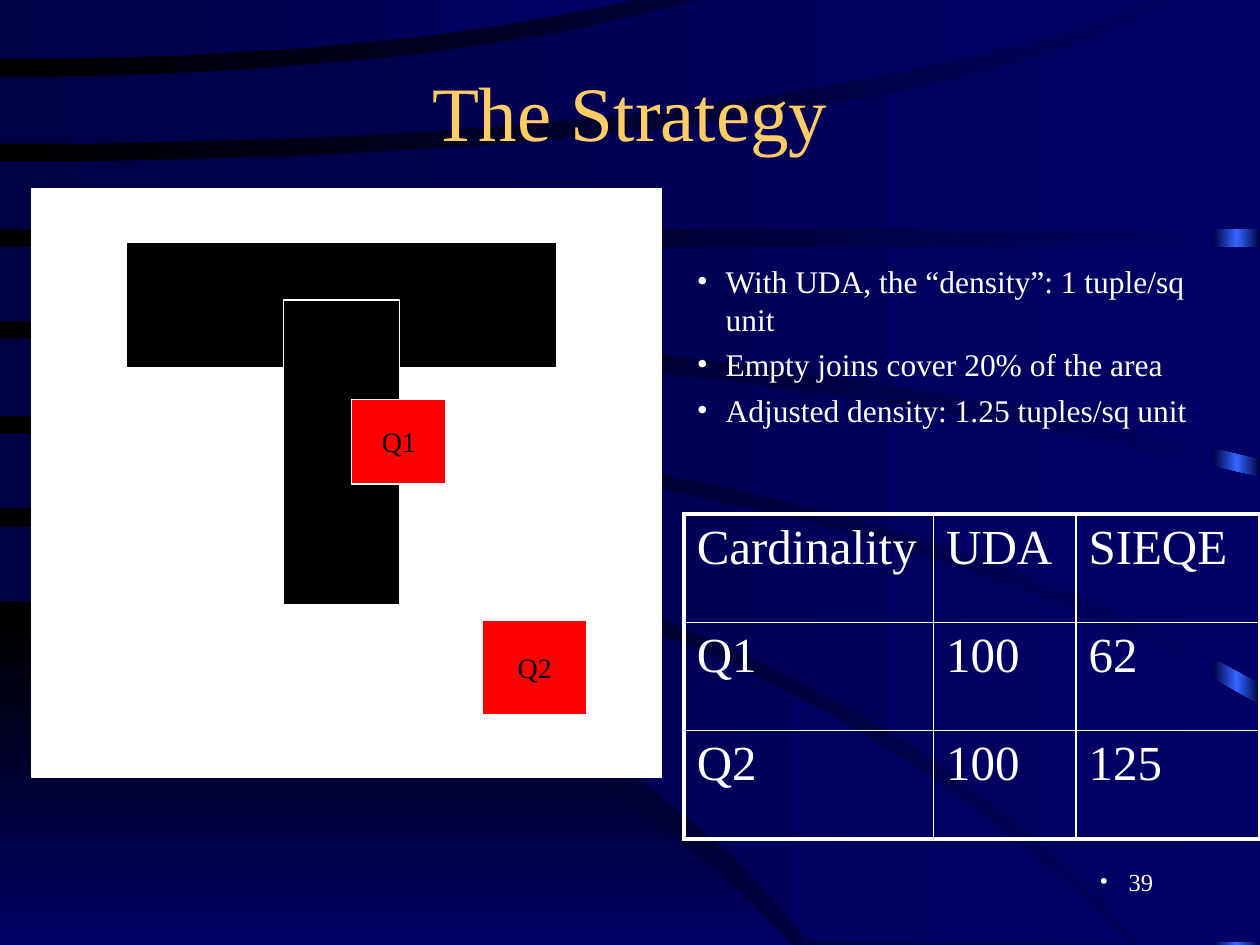
from copy import deepcopy

from lxml.etree import SubElement
from pptx import Presentation
from pptx.dml.color import RGBColor
from pptx.enum.shapes import MSO_SHAPE as Kind
from pptx.enum.text import MSO_ANCHOR as Anchor, MSO_AUTO_SIZE as Fit, PP_ALIGN as Align
from pptx.oxml.ns import qn
from pptx.util import Pt

PX = 9144  # 100 px to the inch
FONT = "Times New Roman"
BLACK = RGBColor(0x00, 0x00, 0x00)
WHITE = RGBColor(0xFF, 0xFF, 0xFF)
NAVY = RGBColor(0x00, 0x00, 0x66)
DARK = RGBColor(0x00, 0x00, 0x44)
BLUE = RGBColor(0x33, 0x66, 0xFF)
GOLD = RGBColor(0xFF, 0xCC, 0x66)
RED = RGBColor(0xFF, 0x00, 0x00)

# Upper and lower edge of each band: start y, bend x, end x, end y; then any corner
BANDS = [
    ((418, 579, 893, 748), (477, 430, 642, 748)),
    ((344, 640, 1000, 560), (403, 588, 909, 748), (1000, 748)),
    ((269, 546, 1000, 379), (330, 620, 1000, 542)),
    ((196, 500, 1000, 196), (255, 560, 1000, 364)),
    ((128, 676, 943, 0), (182, 500, 1000, 182), (1000, 0)),
    ((61, 338, 556, 0), (114, 621, 917, 0)),
    ((0, 250, 501, 0), (47, 290, 501, 0)),
]
CORNER = ((491, 390, 628, 750), (750, 314, 628, 750))


def place(shape, box):
    for name, size in zip(("left", "top", "width", "height"), box):
        setattr(shape, name, size * PX)


def blend(fill, first, last, angle=0):
    fill.gradient()
    fill.gradient_angle = angle
    for stop, tone in zip(fill.gradient_stops, (first, last)):
        stop.color.rgb = tone


def rect(slide, box, tone):
    shape = slide.shapes.add_shape(Kind.RECTANGLE, *[n * PX for n in box])
    shape.shadow.inherit = False
    shape.fill.solid()
    shape.fill.fore_color.rgb = tone
    shape.line.color.rgb = WHITE
    shape.line.width = Pt(1)
    return shape


def write(para, text, size, tone, align=Align.LEFT):
    para.alignment = align
    run = para.add_run()
    run.text = text
    for name, value in {"name": FONT, "size": Pt(size)}.items():
        setattr(run.font, name, value)
    run.font.color.rgb = tone


def bullet(para):
    props = para._p.get_or_add_pPr()
    props.set("marL", str(23 * PX))
    props.set("indent", str(-23 * PX))
    SubElement(props, qn("a:buFont")).set("typeface", FONT)
    SubElement(props, qn("a:buChar")).set("char", "•")


def curve(start, bend, end, drop, steps=16):
    """Points of a quadratic curve that leaves the left edge level."""
    times = [i / steps for i in range(steps + 1)]
    return [(round(2 * t * (1 - t) * bend + t * t * end),
             round(start + t * t * (drop - start))) for t in times]


def sweep(slide, band, first, last, angle=0):
    upper, lower, *corner = band
    dots = curve(*upper) + corner + curve(*lower)[::-1]
    pen = slide.shapes.build_freeform(*dots[0], scale=PX)
    pen.add_line_segments(dots[1:], close=True)
    shape = pen.convert_to_shape()
    shape.shadow.inherit = False
    shape.line.fill.background()
    blend(shape.fill, first, last, angle)


def backdrop(slide):
    blend(slide.background.fill, BLACK, NAVY)
    # Glowing strip at the right edge
    strip = rect(slide, (963, 0, 37, 750), DARK)
    strip.line.fill.background()
    blend(strip.fill, DARK, DARK)
    stops = strip.fill._xPr.find(qn("a:gradFill")).find(qn("a:gsLst"))
    stops.insert(1, deepcopy(stops[0]))
    stops[1].set("pos", "50000")
    strip.fill.gradient_stops[1].color.rgb = BLUE
    # Bands
    sweep(slide, CORNER, BLACK, NAVY, 270)
    for band in BANDS:
        sweep(slide, band, DARK, NAVY)


def heading(slide, box, text):
    title = slide.shapes.title
    slide.shapes._spTree.append(title.element)  # in front of the backdrop
    place(title, box)
    title.text_frame.vertical_anchor = Anchor.MIDDLE
    write(title.text_frame.paragraphs[0], text, 44, GOLD, Align.CENTER)


def points(slide, box, lines):
    body = slide.placeholders[1]
    slide.shapes._spTree.append(body.element)
    place(body, box)
    frame = body.text_frame
    frame.auto_size = Fit.NONE
    for i, text in enumerate(lines):
        para = frame.add_paragraph() if i else frame.paragraphs[0]
        para.space_before = Pt(4.3 if i else 0)
        write(para, text, 18, WHITE)
        bullet(para)


def diagram(slide, box):
    left, top = box[:2]
    rect(slide, box, WHITE)
    parts = [
        ((75, 42, 342, 100), BLACK, ""),
        ((200, 88, 92, 242), BLACK, ""),
        ((254, 167, 75, 67), RED, "Q1"),
        ((358, 342, 83, 75), RED, "Q2"),
    ]
    for (x, y, wide, high), tone, text in parts:
        shape = rect(slide, (left + x, top + y, wide, high), tone)
        if text:
            frame = shape.text_frame
            frame.word_wrap = False
            frame.vertical_anchor = Anchor.MIDDLE
            write(frame.paragraphs[0], text, 16, BLACK, Align.CENTER)


def border(cell, sides):
    props = cell._tc.get_or_add_tcPr()
    for side, outer in sides.items():
        line = SubElement(props, qn(f"a:ln{side}"), w=str(Pt(2.25 if outer else 1)))
        fill = SubElement(line, qn("a:solidFill"))
        SubElement(fill, qn("a:srgbClr")).set("val", str(WHITE))


def grid(slide, box, rows, widths):
    high, wide = len(rows), len(widths)
    table = slide.shapes.add_table(high, wide, *[n * PX for n in box]).table
    table.first_row = table.horz_banding = False
    for col, width in zip(table.columns, widths):
        col.width = width * PX
    for r, row in enumerate(rows):
        for c, text in enumerate(row):
            cell = table.cell(r, c)
            write(cell.text_frame.paragraphs[0], text, 28, WHITE)
            border(cell, {"L": c == 0, "R": c == wide - 1, "T": r == 0, "B": r == high - 1})
            cell.fill.background()


def number(slide, box, text):
    frame = slide.shapes.add_textbox(*[n * PX for n in box]).text_frame
    frame.word_wrap = True
    write(frame.paragraphs[0], text, 14, WHITE, Align.RIGHT)
    bullet(frame.paragraphs[0])


def main():
    deck = Presentation()
    deck.slide_width, deck.slide_height = 1000 * PX, 750 * PX
    slide = deck.slides.add_slide(deck.slide_layouts[1])
    backdrop(slide)
    number(slide, (717, 683, 208, 50), "39")
    heading(slide, (75, 25, 850, 125), "The Strategy")
    diagram(slide, (25, 150, 500, 467))
    points(slide, (543, 203, 430, 148), [
        "With UDA, the “density”: 1 tuple/sq unit",
        "Empty joins cover 20% of the area",
        "Adjusted density: 1.25 tuples/sq unit",
    ])
    grid(slide, (543, 408, 457, 258), [
        ("Cardinality", "UDA", "SIEQE"),
        ("Q1", "100", "62"),
        ("Q2", "100", "125"),
    ], (198, 113, 146))
    deck.save("out.pptx")


if __name__ == "__main__":
    main()
